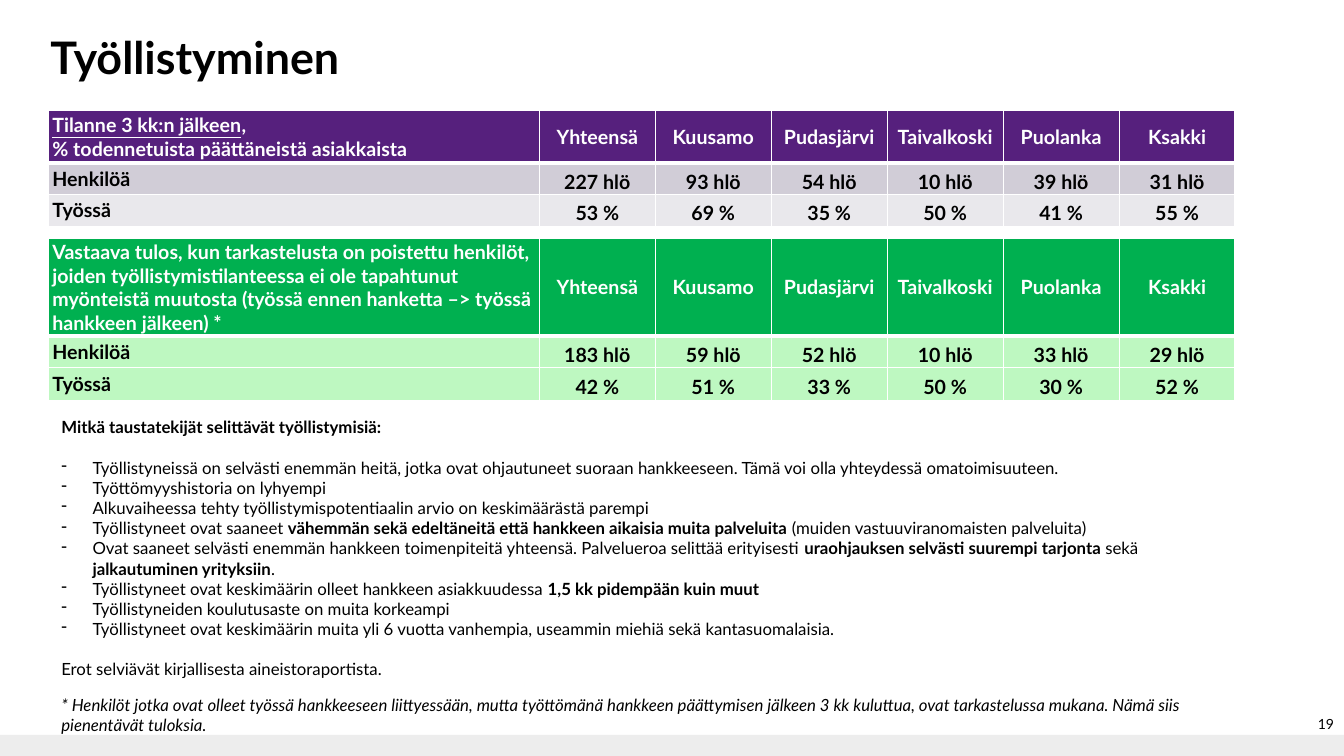
from dataclasses import dataclass

from lxml.etree import SubElement
from pptx import Presentation
from pptx.dml.color import RGBColor
from pptx.enum.shapes import MSO_SHAPE
from pptx.enum.text import MSO_ANCHOR, MSO_AUTO_SIZE, PP_ALIGN
from pptx.oxml.ns import qn
from pptx.util import Inches, Pt


@dataclass(frozen=True)
class Theme:
    font: str = "Lato"
    black: str = "000000"
    white: str = "FFFFFF"
    footer: str = "EDEDED"
    purple: tuple = ("56207D", "D1CDD7", "E9E8EC")
    green: tuple = ("00B050", "BEF8C1", "BEF8C1")
    title: int = 32
    table: int = 14
    body: int = 12
    page: int = 10


theme = Theme()


def add_run(paragraph, text, size, color=theme.black, bold=False, italic=False, underline=False):
    run = paragraph.add_run()
    run.text = text
    font = run.font
    font.name, font.size = theme.font, Pt(size)
    font.bold, font.italic, font.underline = bold, italic, underline
    font.color.rgb = RGBColor.from_string(color)


def add_borders(cell, top, bottom):
    """Draw white cell borders; top and bottom are widths in points."""
    properties = cell._tc.get_or_add_tcPr()
    for side, width in (("L", 1), ("R", 1), ("T", top), ("B", bottom)):
        line = SubElement(properties, qn(f"a:ln{side}"), w=str(Pt(width)))
        SubElement(SubElement(line, qn("a:solidFill")), qn("a:srgbClr"), val=theme.white)


prs = Presentation()
prs.slide_width, prs.slide_height = Inches(13.33), Inches(7.5)
slide = prs.slides.add_slide(prs.slide_layouts[5])

footer = slide.shapes.add_shape(
    MSO_SHAPE.RECTANGLE, 0, Inches(7.29), prs.slide_width, Inches(0.21))
footer.shadow.inherit = False
footer.fill.solid()
footer.fill.fore_color.rgb = RGBColor.from_string(theme.footer)
footer.line.fill.background()

title = slide.shapes.title
title.left, title.top, title.width, title.height = (
    Inches(0.4), Inches(0.23), Inches(12.47), Inches(0.67))
title.text_frame.vertical_anchor = MSO_ANCHOR.MIDDLE
heading = title.text_frame.paragraphs[0]
heading.alignment = PP_ALIGN.LEFT
add_run(heading, "Työllistyminen", theme.title, bold=True)

# Result tables: each heading is a list of paragraphs of (text, underlined) runs
areas = ["Yhteensä", "Kuusamo", "Pudasjärvi", "Taivalkoski", "Puolanka", "Ksakki"]
results = [
    (1.1, (0.52, 0.31, 0.31), theme.purple,
     [[("Tilanne 3 kk:n jälkeen", True), (",", False)],
      [("% todennetuista päättäneistä asiakkaista", False)]],
     [227, 93, 54, 10, 39, 31], [53, 69, 35, 50, 41, 55]),
    (2.37, (0.96, 0.32, 0.32), theme.green,
     [[("Vastaava tulos, kun tarkastelusta on poistettu henkilöt, joiden "
        "työllistymistilanteessa ei ole tapahtunut myönteistä muutosta "
        "(työssä ennen hanketta –> työssä hankkeen jälkeen) *", False)]],
     [183, 59, 52, 10, 33, 29], [42, 51, 33, 50, 30, 52]),
]
for top, heights, fills, topic, people, employed in results:
    table = slide.shapes.add_table(
        3, 7, Inches(0.48), Inches(top), Inches(11.77), Inches(sum(heights))).table
    table.horz_banding = False
    for column, width in zip(table.columns, [4.87] + [1.15] * 6):
        column.width = Inches(width)
    rows = [
        [topic] + [[[(area, False)]] for area in areas],
        [[[("Henkilöä", False)]]] + [[[(f"{count} hlö", False)]] for count in people],
        [[[("Työssä", False)]]] + [[[(f"{share} %", False)]] for share in employed],
    ]
    for r, row in enumerate(rows):
        table.rows[r].height = Inches(heights[r])
        for c, paragraphs in enumerate(row):
            cell = table.cell(r, c)
            cell.vertical_anchor = MSO_ANCHOR.MIDDLE
            cell.margin_left = cell.margin_right = Inches(0.02 if r == 0 and c else 0.04)
            cell.margin_top = cell.margin_bottom = Inches(0.01)
            add_borders(cell, top=3 if r == 1 else 1, bottom=3 if r == 0 else 1)
            cell.fill.solid()
            cell.fill.fore_color.rgb = RGBColor.from_string(fills[r])
            for i, runs in enumerate(paragraphs):
                frame = cell.text_frame
                paragraph = frame.add_paragraph() if i else frame.paragraphs[0]
                if c:
                    paragraph.alignment = PP_ALIGN.CENTER
                if r and c:
                    paragraph.line_spacing = 1.25
                    paragraph.space_after = Pt(10)
                for text, underline in runs:
                    add_run(paragraph, text, theme.table, theme.black if r else theme.white,
                            bold=True, underline=underline)

# Background factors: runs of (text, bold)
factors = [
    [("Työllistyneissä on selvästi enemmän heitä, jotka ovat ohjautuneet suoraan hankkeeseen. "
      "Tämä voi olla yhteydessä omatoimisuuteen.", False)],
    [("Työttömyyshistoria on lyhyempi", False)],
    [("Alkuvaiheessa tehty työllistymispotentiaalin arvio on keskimäärästä parempi", False)],
    [("Työllistyneet ovat saaneet ", False),
     ("vähemmän sekä edeltäneitä että hankkeen aikaisia muita palveluita ", True),
     ("(muiden vastuuviranomaisten palveluita)", False)],
    [("Ovat saaneet selvästi enemmän hankkeen toimenpiteitä yhteensä. "
      "Palvelueroa selittää erityisesti ", False),
     ("uraohjauksen selvästi suurempi tarjonta ", True),
     ("sekä ", False),
     ("jalkautuminen yrityksiin", True),
     (".", False)],
    [("Työllistyneet ovat keskimäärin olleet hankkeen asiakkuudessa ", False),
     ("1,5 kk pidempään kuin muut", True)],
    [("Työllistyneiden koulutusaste on muita korkeampi", False)],
    [("Työllistyneet ovat keskimäärin muita yli 6 vuotta vanhempia, "
      "useammin miehiä sekä kantasuomalaisia.", False)],
]
findings = slide.shapes.add_textbox(
    Inches(0.51), Inches(4.09), Inches(11.84), Inches(3.33)).text_frame
findings.word_wrap = True
findings.auto_size = MSO_AUTO_SIZE.SHAPE_TO_FIT_TEXT
add_run(findings.paragraphs[0], "Mitkä taustatekijät selittävät työllistymisiä:",
        theme.body, bold=True)
for i, runs in enumerate(factors):
    factor = findings.add_paragraph()
    properties = factor._p.get_or_add_pPr()
    properties.set("marL", str(Inches(0.31)))
    properties.set("indent", str(-Inches(0.31)))
    SubElement(properties, qn("a:buChar"), char="-")
    if i == 0:
        factor.space_before = Pt(14.4)
    for text, bold in runs:
        add_run(factor, text, theme.body, bold=bold)

closing = findings.add_paragraph()
closing.space_before = Pt(14.4)
add_run(closing, "Erot selviävät kirjallisesta aineistoraportista.", theme.body)
footnote = findings.add_paragraph()
footnote.space_before = Pt(10.8)
add_run(footnote,
        "* Henkilöt jotka ovat olleet työssä hankkeeseen liittyessään, mutta työttömänä "
        "hankkeen päättymisen jälkeen 3 kk kuluttua, ovat tarkastelussa mukana. "
        "Nämä siis pienentävät tuloksia.", theme.body, italic=True)

page = slide.shapes.add_textbox(
    Inches(12.73), Inches(6.98), Inches(0.6), Inches(0.4)).text_frame
page.word_wrap = True
page.vertical_anchor = MSO_ANCHOR.MIDDLE
page.paragraphs[0].alignment = PP_ALIGN.RIGHT
add_run(page.paragraphs[0], "19", theme.page)

prs.save("out.pptx")
